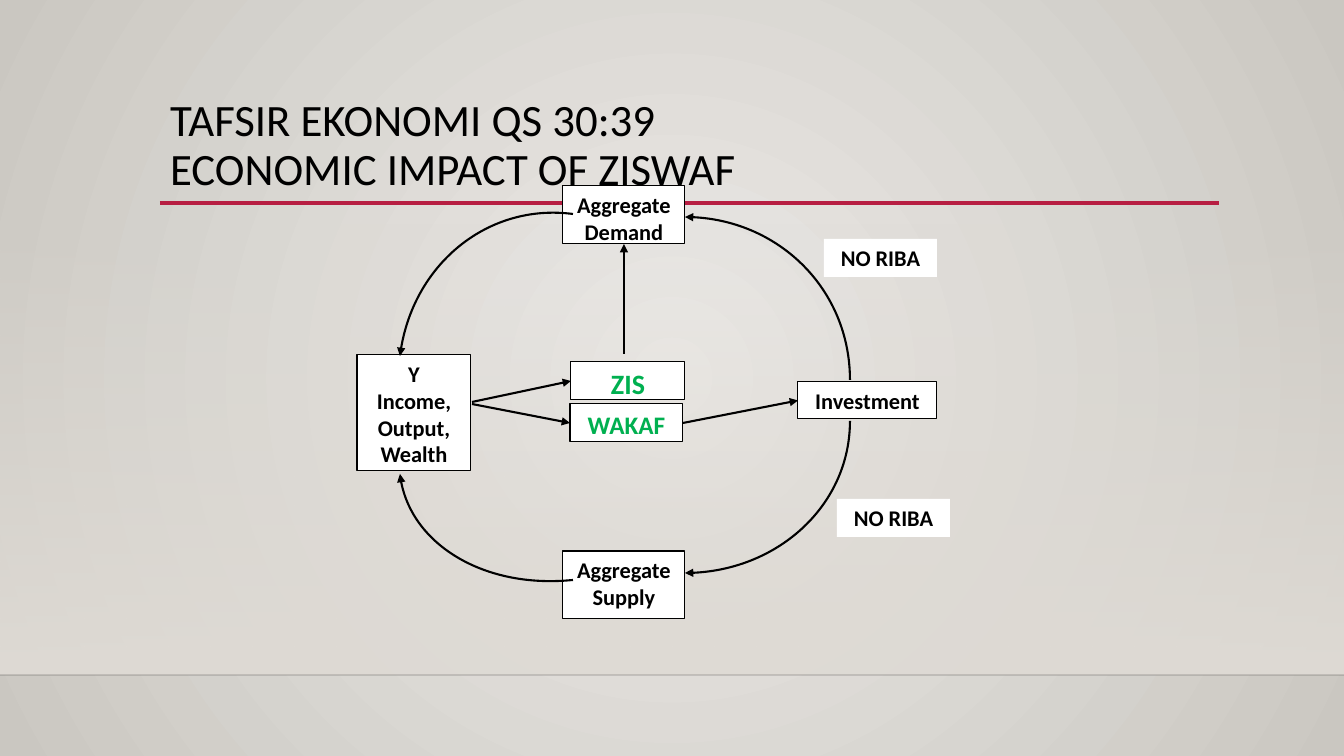
"""Build a one-slide diagram of the economic impact of ZISWAF."""
from copy import deepcopy
from dataclasses import dataclass
from typing import Any, Optional

from lxml import etree
from pptx import Presentation
from pptx.dml.color import RGBColor
from pptx.enum.shapes import MSO_CONNECTOR, MSO_SHAPE
from pptx.enum.text import MSO_ANCHOR, PP_ALIGN
from pptx.oxml.ns import qn
from pptx.util import Pt

EMU_PER_PX = 914400 / 100.8
RECTANGLE = MSO_SHAPE.RECTANGLE
STRAIGHT = MSO_CONNECTOR.STRAIGHT
TOP, MIDDLE = MSO_ANCHOR.TOP, MSO_ANCHOR.MIDDLE
LEFT, CENTER = PP_ALIGN.LEFT, PP_ALIGN.CENTER
LEFT_SIDE, BOTTOM_SIDE, RIGHT_SIDE = 1, 2, 3
BLACK, WHITE, GREEN, BAND = "000000", "FFFFFF", "00B050", "DFDBD5"

Point = tuple[int, int]


@dataclass(frozen=True)
class Box:
    """A white box with centred bold text."""
    name: str
    text: str
    left: int
    top: int
    width: int
    height: int
    size: int = 16
    color: str = BLACK
    outlined: bool = True


@dataclass(frozen=True)
class Arrow:
    """A straight arrow, joined to boxes where a box is named."""
    begin: Point
    end: Point
    end_box: str
    end_side: int
    begin_box: Optional[str] = None


@dataclass(frozen=True)
class Arc:
    """A Bezier arc with an arrowhead at its end."""
    start: Point
    first_control: Point
    second_control: Point
    end: Point


BOXES = [
    Box("income", "Y\nIncome,\nOutput, Wealth", 357, 355, 114, 116),
    Box("zis", "ZIS", 571, 362, 114, 38, 20, GREEN),
    Box("demand", "Aggregate Demand", 563, 186, 122, 58),
    Box("supply", "Aggregate Supply", 563, 551, 122, 68),
    Box("wakaf", "WAKAF", 570, 404, 113, 38, 18, GREEN),
    Box("investment", "Investment", 798, 382, 139, 37),
]
LABELS = [
    Box("demand label", "NO RIBA", 824, 239, 113, 38, outlined=False),
    Box("supply label", "NO RIBA", 837, 499, 113, 38, outlined=False),
]
ARCS = [
    Arc((850, 421), (850, 504), (776, 573), (685, 573)),
    Arc((573, 214), (489, 203), (411, 266), (400, 356)),
    Arc((850, 380), (850, 290), (776, 217), (685, 217)),
    Arc((573, 580), (484, 589), (407, 541), (400, 474)),
]
ARROWS = [
    Arrow((472, 404), (570, 423), "wakaf", LEFT_SIDE),
    Arrow((472, 402), (571, 381), "zis", LEFT_SIDE),
    Arrow((624, 354), (624, 244), "demand", BOTTOM_SIDE),
    Arrow((683, 423), (798, 401), "investment", LEFT_SIDE, "wakaf"),
]


def px(length: int) -> int:
    """Turn px into EMU."""
    return round(length * EMU_PER_PX)


def rgb(color: str) -> RGBColor:
    """Turn a hex string into a colour."""
    return RGBColor.from_string(color)


def set_attributes(target: Any, values: dict[str, Any]) -> None:
    """Set each named attribute of the target."""
    for name, value in values.items():
        setattr(target, name, value)


def set_alpha(color_element: Any, percent: int) -> None:
    """Give a colour element an opacity."""
    etree.SubElement(color_element, qn("a:alpha"), val=str(percent * 1000))


def format_text(shape: Any, size: int, color: str, bold: bool, alignment: Any) -> None:
    """Format every run and line break of a shape."""
    for paragraph in shape.text_frame.paragraphs:
        paragraph.alignment = alignment
        for run in paragraph.runs:
            set_attributes(run.font, {"name": "Calibri", "size": Pt(size), "bold": bold})
            run.font.color.rgb = rgb(color)
        for line_break in paragraph._p.findall(qn("a:br")):
            line_break.append(deepcopy(paragraph.runs[0].font._rPr))


def style_line(shape: Any, color: str, width: float, arrow: bool = False) -> None:
    """Colour a line and optionally put an arrowhead at its end."""
    shape.line.color.rgb = rgb(color)
    shape.line.width = Pt(width)
    if arrow:
        outline = shape.element.find(".//" + qn("a:ln"))
        etree.SubElement(outline, qn("a:tailEnd"), type="triangle")


def add_line(slide: Any, begin: Point, end: Point, color: str, width: float,
             arrow: bool = False) -> Any:
    """Add a straight connector without a shadow."""
    connector = slide.shapes.add_connector(STRAIGHT, *map(px, begin + end))
    style_line(connector, color, width, arrow)
    etree.SubElement(connector.element.spPr, qn("a:effectLst"))
    return connector


def add_background(slide: Any) -> None:
    """Paint the round backdrop, the lower band and the two rules."""
    fill = slide.background.fill
    fill.gradient()
    for stop, color in zip(fill.gradient_stops, ("ECEAE7", "CAC7C1")):
        stop.color.rgb = rgb(color)
    gradient = slide.element.find(".//" + qn("a:gradFill"))
    gradient.remove(gradient.find(qn("a:lin")))
    circle = etree.SubElement(gradient, qn("a:path"), path="circle")
    etree.SubElement(circle, qn("a:fillToRect"), dict.fromkeys("ltrb", "50000"))

    band = slide.shapes.add_shape(RECTANGLE, 0, px(223), px(1344), px(452))
    band.shadow.inherit = False
    band.line.fill.background()
    band.fill.gradient()
    band.fill.gradient_angle = 270
    for stop in band.fill.gradient_stops:
        stop.color.rgb = rgb(BAND)
    set_alpha(band.element.find(".//" + qn("a:srgbClr")), 0)

    floor = add_line(slide, (0, 675), (1344, 675), "000001", 1)
    set_alpha(floor.element.find(".//" + qn("a:srgbClr")), 20)
    add_line(slide, (160, 203), (1219, 203), "B71E42", 2.5)


def add_title(slide: Any) -> None:
    """Place and format the title."""
    title = slide.shapes.title
    set_attributes(title, {"left": px(160), "top": px(89), "width": px(1058), "height": px(115)})
    title.text_frame.text = "TAFSIR EKONOMI QS 30:39\vECONOMIC IMPACT OF ZISWAF"
    set_attributes(title.text_frame, {"word_wrap": True, "vertical_anchor": MIDDLE})
    title.text_frame.paragraphs[0].line_spacing = 0.9
    format_text(title, 32, BLACK, False, LEFT)


def add_box(slide: Any, box: Box) -> Any:
    """Add one text box of the diagram."""
    frame = map(px, (box.left, box.top, box.width, box.height))
    shape = slide.shapes.add_shape(RECTANGLE, *frame)
    shape.shadow.inherit = False
    shape.fill.solid()
    shape.fill.fore_color.rgb = rgb(WHITE)
    if box.outlined:
        style_line(shape, BLACK, 0.75)
    else:
        shape.line.fill.background()
    shape.text_frame.text = box.text
    set_attributes(shape.text_frame, {"word_wrap": True, "vertical_anchor": TOP})
    format_text(shape, box.size, box.color, True, CENTER)
    return shape


def add_arc(slide: Any, arc: Arc) -> None:
    """Add one curved arrow, turning three segments into a Bezier curve."""
    builder = slide.shapes.build_freeform(*arc.start, scale=EMU_PER_PX)
    builder.add_line_segments([arc.first_control, arc.second_control, arc.end], close=False)
    shape = builder.convert_to_shape()
    outline = shape.element.find(".//" + qn("a:path"))
    curve = etree.SubElement(outline, qn("a:cubicBezTo"))
    for segment in outline.findall(qn("a:lnTo")):
        curve.append(segment[0])
        outline.remove(segment)
    shape.shadow.inherit = False
    shape.fill.background()
    style_line(shape, BLACK, 1.5, arrow=True)


def main() -> None:
    """Build and save the slide."""
    presentation = Presentation()
    set_attributes(presentation, {"slide_width": px(1344), "slide_height": px(756)})
    slide = presentation.slides.add_slide(presentation.slide_layouts[5])
    add_background(slide)
    add_title(slide)
    shapes = {box.name: add_box(slide, box) for box in BOXES}
    for arc in ARCS:
        add_arc(slide, arc)
    for arrow in ARROWS:
        connector = add_line(slide, arrow.begin, arrow.end, BLACK, 1.5, arrow=True)
        if arrow.begin_box:
            connector.begin_connect(shapes[arrow.begin_box], RIGHT_SIDE)
        connector.end_connect(shapes[arrow.end_box], arrow.end_side)
    for label in LABELS:
        add_box(slide, label)
    presentation.save("out.pptx")


if __name__ == "__main__":
    main()
